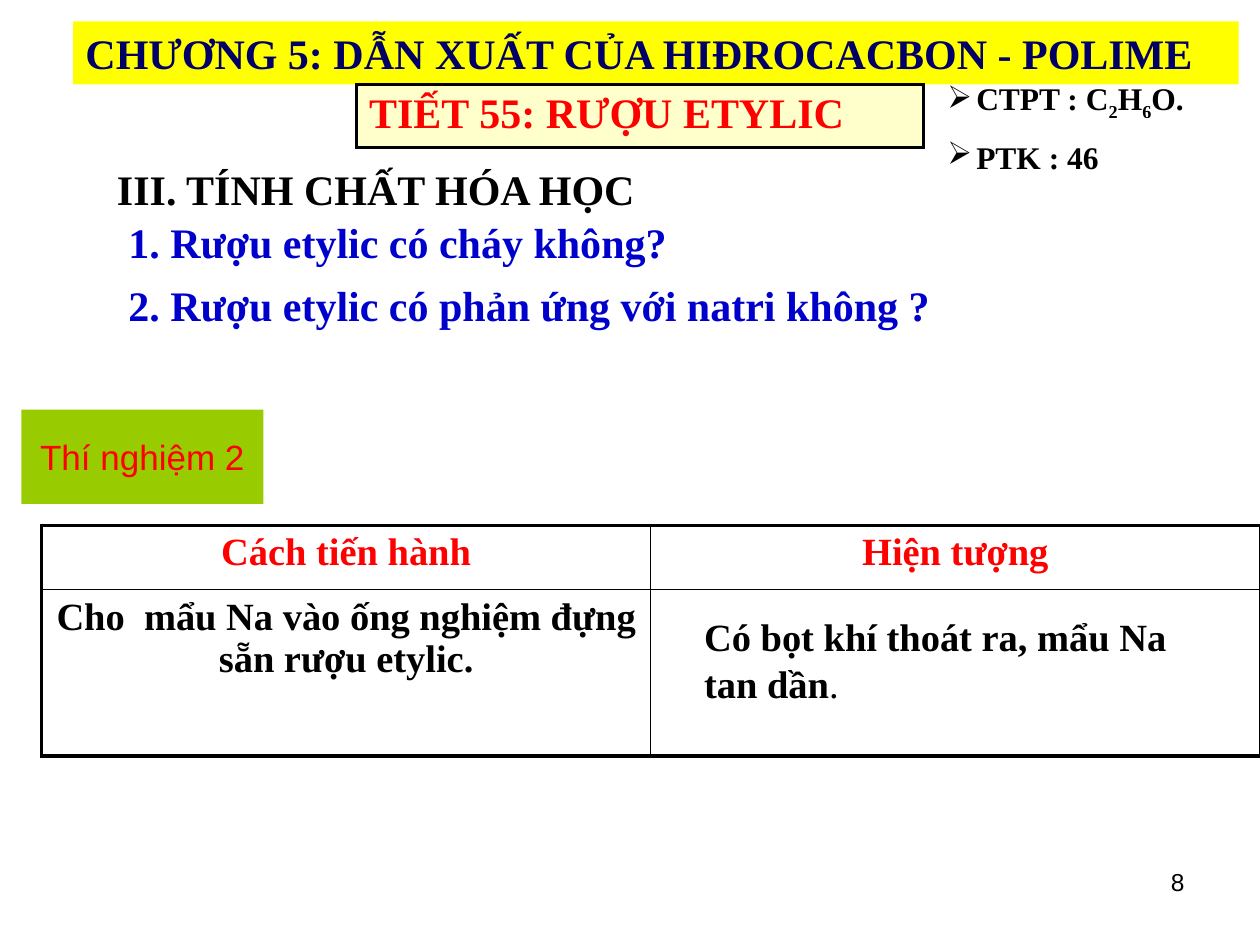
from dataclasses import dataclass

import pptx
import pptx.dml.color
import pptx.enum.shapes
import pptx.enum.text
import pptx.oxml
import pptx.oxml.ns
import pptx.util

Inches = pptx.util.Inches
ALIGN = pptx.enum.text.PP_ALIGN


@dataclass(frozen=True)
class Theme:
    """Colours, fonts and type sizes of the slide."""
    black: str = "000000"
    red: str = "FF0000"
    blue: str = "0000CC"
    navy: str = "000066"
    yellow: str = "FFFF00"
    cream: str = "FFFFCC"
    green: str = "99CC00"
    serif: str = "Times New Roman"
    sans: str = "Arial"
    heading: int = 24
    body: int = 22
    label: int = 20
    fact: int = 18
    number: int = 14


THEME = Theme()


def rgb(value):
    """Turn a hex string into a colour."""
    return pptx.dml.color.RGBColor.from_string(value)


def style_paragraph(paragraph, size, color, bold=True, font=THEME.serif, align=ALIGN.LEFT):
    """Set the font and alignment of a whole paragraph."""
    paragraph.alignment = align
    paragraph.font.size = pptx.util.Pt(size)
    paragraph.font.color.rgb = rgb(color)
    paragraph.font.bold = bold
    paragraph.font.name = font


def add_text(slide, box, text, size, color, **style):
    """Add a wrapping text box with one paragraph and return the paragraph."""
    frame = slide.shapes.add_textbox(*map(Inches, box)).text_frame
    frame.word_wrap = True
    paragraph = frame.paragraphs[0]
    paragraph.text = text
    style_paragraph(paragraph, size, color, **style)
    return paragraph


def add_panel(slide, box, fill, text, size, color, anchor, **style):
    """Add a filled rectangle without a line, holding one paragraph."""
    shape = slide.shapes.add_shape(pptx.enum.shapes.MSO_SHAPE.RECTANGLE, *map(Inches, box))
    shape.shadow.inherit = False
    shape.fill.solid()
    shape.fill.fore_color.rgb = rgb(fill)
    shape.line.fill.background()
    shape.text_frame.word_wrap = True
    shape.text_frame.vertical_anchor = anchor
    paragraph = shape.text_frame.paragraphs[0]
    paragraph.text = text
    style_paragraph(paragraph, size, color, **style)


def set_borders(cell, left, right, top, bottom):
    """Draw the four black borders of a cell, with widths in points."""
    properties = cell._tc.get_or_add_tcPr()
    widths = {"L": left, "R": right, "T": top, "B": bottom}
    for index, (side, width) in enumerate(widths.items()):
        properties.insert(index, pptx.oxml.parse_xml(
            f'<a:ln{side} {pptx.oxml.ns.nsdecls("a")} w="{pptx.util.Pt(width)}">'
            f'<a:solidFill><a:srgbClr val="{THEME.black}"/></a:solidFill></a:ln{side}>'))


def add_plain_table(slide, box, row_heights, column_count):
    """Add a table without banding, with equal columns and given row heights."""
    table = slide.shapes.add_table(len(row_heights), column_count, *map(Inches, box)).table
    table.first_row = table.horz_banding = False
    for row, height in zip(table.rows, row_heights):
        row.height = Inches(height)
    for cell in table.iter_cells():
        cell.fill.background()
    return table


def add_experiment_table(slide, box):
    """Place the table of procedure and observation."""
    table = add_plain_table(slide, box, (0.51, 1.32), 2)
    rows = (("Cách tiến hành", "Hiện tượng"),
            ("Cho  mẩu Na vào ống nghiệm đựng sẵn rượu etylic.", ""))
    thick, thin = 2.25, 1
    for row, (texts, color) in enumerate(zip(rows, (THEME.red, THEME.black))):
        for column, text in enumerate(texts):
            cell = table.cell(row, column)
            cell.text = text
            style_paragraph(cell.text_frame.paragraphs[0], THEME.body, color, align=ALIGN.CENTER)
            set_borders(cell, thin if column else thick, thin,
                        thin if row else thick, thick if row else thin)


def add_lesson_title(slide, box):
    """Place the framed lesson title."""
    cell = add_plain_table(slide, box, (box[3],), 1).cell(0, 0)
    cell.fill.solid()
    cell.fill.fore_color.rgb = rgb(THEME.cream)
    cell.text = "TIẾT 55: RƯỢU ETYLIC"
    style_paragraph(cell.text_frame.paragraphs[0], THEME.heading, THEME.red)
    set_borders(cell, 1.5, 1.5, 1.5, 1.5)


def add_observation(slide, box):
    """Place the observed result, ending in a regular full stop."""
    paragraph = add_text(slide, box, "Có bọt khí thoát ra, mẩu Na tan dần",
                         THEME.body, THEME.black)
    stop = paragraph.add_run()
    stop.text = "."
    stop.font.bold = False


def add_formula_facts(slide, box):
    """Place the bulleted formula, with digits as subscripts, and the molecular mass."""
    frame = slide.shapes.add_textbox(*map(Inches, box)).text_frame
    frame.word_wrap = True
    facts = (("CTPT : C", "2", "H", "6", "O."), ("PTK : 46",))
    for index, pieces in enumerate(facts):
        paragraph = frame.add_paragraph() if index else frame.paragraphs[0]
        for piece in pieces:
            run = paragraph.add_run()
            run.text = piece
            if piece.isdigit():
                run._r.get_or_add_rPr().set("baseline", "-25000")
        style_paragraph(paragraph, THEME.fact, THEME.black)
        if index:
            paragraph.space_before = pptx.util.Pt(THEME.fact / 2)
        properties = paragraph._p.get_or_add_pPr()
        properties.set("marL", str(Inches(0.23)))
        properties.set("indent", str(-Inches(0.23)))
        properties.find(pptx.oxml.ns.qn("a:defRPr")).addprevious(pptx.oxml.parse_xml(
            f'<a:buChar {pptx.oxml.ns.nsdecls("a")} char="➢"/>'))


def add_outline(slide, left, top):
    """Place the section heading and its two questions."""
    add_text(slide, (left, top, 5.92, 0.51), "III. TÍNH CHẤT HÓA HỌC", THEME.heading, THEME.black)
    questions = ("1. Rượu etylic có cháy không?",
                 "2. Rượu etylic có phản ứng với natri không ?")
    for index, question in enumerate(questions):
        add_text(slide, (left + 0.09, top + 0.42 + index * 0.5, 7.33, 0.51),
                 question, THEME.heading, THEME.blue)


def main():
    """Build the slide and save it."""
    presentation = pptx.Presentation()
    presentation.slide_width, presentation.slide_height = Inches(10), Inches(7.5)
    slide = presentation.slides.add_slide(presentation.slide_layouts[6])
    anchors = pptx.enum.text.MSO_ANCHOR
    add_panel(slide, (0.17, 3.25, 1.92, 0.75), THEME.green, "Thí nghiệm 2", THEME.label,
              THEME.red, anchors.MIDDLE, bold=False, font=THEME.sans, align=ALIGN.CENTER)
    add_experiment_table(slide, (0.33, 4.17, 9.67, 1.83))
    add_observation(slide, (5.49, 4.82, 4.33, 0.84))
    add_formula_facts(slide, (7.42, 0.58, 2.33, 1.16))
    add_outline(slide, 0.83, 1.25)
    add_panel(slide, (0.58, 0.17, 9.25, 0.5), THEME.yellow,
              "CHƯƠNG 5: DẪN XUẤT CỦA HIĐROCACBON - POLIME", THEME.heading,
              THEME.navy, anchors.TOP)
    add_lesson_title(slide, (2.83, 0.67, 4.5, 0.5))
    add_text(slide, (7.17, 6.83, 2.33, 0.52), "8", THEME.number, THEME.black,
             bold=False, font=THEME.sans, align=ALIGN.RIGHT)
    presentation.save("out.pptx")


if __name__ == "__main__":
    main()
